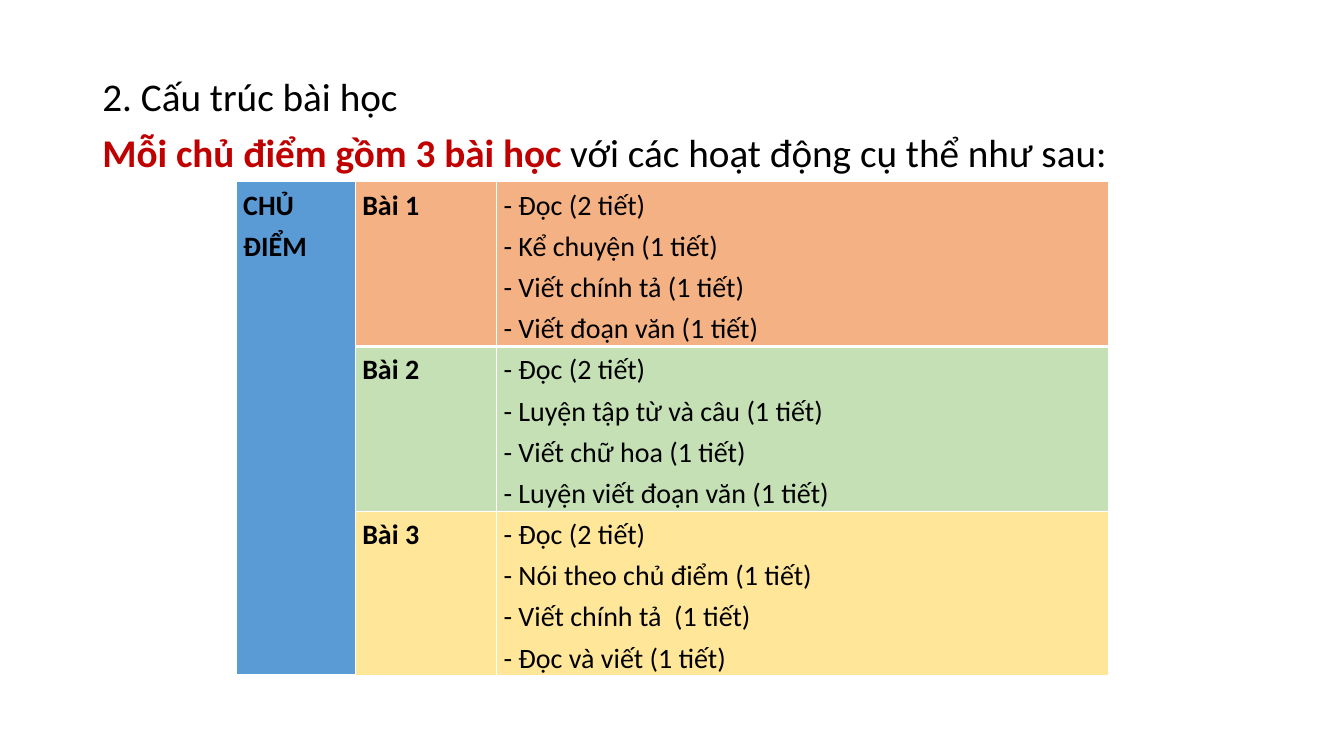
from lxml import etree
from pptx import Presentation
from pptx.dml.color import RGBColor
from pptx.enum.text import PP_ALIGN
from pptx.oxml.ns import qn
from pptx.util import Cm, Pt

JUSTIFY = PP_ALIGN.JUSTIFY
FONT = "Calibri"
COLORS = {
    "text": "000000",
    "accent": "C00000",
    "border": "FFFFFF",
    "topic": "5B9BD5",
}
LESSONS = [
    ("Bài 1", "F4B183", ["Đọc (2 tiết)", "Kể chuyện (1 tiết)",
                         "Viết chính tả (1 tiết)", "Viết đoạn văn (1 tiết)"]),
    ("Bài 2", "C5E0B4", ["Đọc (2 tiết)", "Luyện tập từ và câu (1 tiết)",
                         "Viết chữ hoa (1 tiết)", "Luyện viết đoạn văn (1 tiết)"]),
    ("Bài 3", "FFE699", ["Đọc (2 tiết)", "Nói theo chủ điểm (1 tiết)",
                         "Viết chính tả  (1 tiết)", "Đọc và viết (1 tiết)"]),
]
COLUMN_WIDTHS = [Cm(3), Cm(3.56), Cm(15.44)]
ROW_HEIGHT = Cm(4.15)


def set_font(font, size, color, bold=False):
    font.name = FONT
    font.size = Pt(size)
    font.bold = bold
    font.color.rgb = RGBColor.from_string(color)


def add_heading(s):
    tf = s.shapes.add_textbox(Cm(2.33), Cm(1.83), Cm(29.21), Cm(15.34)).text_frame
    tf.word_wrap = True
    lines = [
        [("2. Cấu trúc bài học", "text", False)],
        [("Mỗi chủ điểm gồm 3 bài học ", "accent", True),
         ("với các hoạt động cụ thể như sau:", "text", False)],
    ]
    for i, runs in enumerate(lines):
        p = tf.add_paragraph() if i else tf.paragraphs[0]
        p.line_spacing = 0.9
        p.space_before = Pt(10)
        for text, color, bold in runs:
            r = p.add_run()
            r.text = text
            set_font(r.font, 28, COLORS[color], bold)


def set_borders(cell, bottom):
    """Draw thin borders, with the bottom one as wide as given in points."""
    tcPr = cell._tc.get_or_add_tcPr()
    for tag, width in (("lnL", 1), ("lnR", 1), ("lnT", 1), ("lnB", bottom)):
        ln = etree.SubElement(tcPr, qn(f"a:{tag}"), w=str(Pt(width)))
        fill = etree.SubElement(ln, qn("a:solidFill"))
        etree.SubElement(fill, qn("a:srgbClr"), val=COLORS["border"])


def fill_cell(cell, lines, color, bold):
    cell.fill.solid()
    cell.fill.fore_color.rgb = RGBColor.from_string(color)
    cell.margin_left = cell.margin_right = Cm(0.18)
    cell.margin_top = cell.margin_bottom = 0
    cell.text = "\n".join(lines)
    for p in cell.text_frame.paragraphs:
        p.alignment = JUSTIFY
        p.line_spacing = 1.2
        set_font(p.font, 20, COLORS["text"], bold)


def add_lesson_table(s):
    table = s.shapes.add_table(
        len(LESSONS), len(COLUMN_WIDTHS), Cm(5.95), Cm(4.58),
        sum(COLUMN_WIDTHS), ROW_HEIGHT * len(LESSONS)).table
    for column, width in zip(table.columns, COLUMN_WIDTHS):
        column.width = width
    for i, row in enumerate(table.rows):
        row.height = ROW_HEIGHT
        for cell in row.cells:
            set_borders(cell, 1 if i else 3)

    topic = table.cell(0, 0)
    topic.merge(table.cell(len(LESSONS) - 1, 0))
    fill_cell(topic, ["CHỦ ĐIỂM"], COLORS["topic"], True)
    for i, (lesson, color, activities) in enumerate(LESSONS):
        fill_cell(table.cell(i, 1), [lesson], color, True)
        fill_cell(table.cell(i, 2), [f"- {a}" for a in activities], color, False)


def main():
    prs = Presentation()
    prs.slide_width = Cm(33.87)
    prs.slide_height = Cm(19.05)
    s = prs.slides.add_slide(prs.slide_layouts[6])
    add_heading(s)
    add_lesson_table(s)
    prs.save("out.pptx")


if __name__ == "__main__":
    main()
